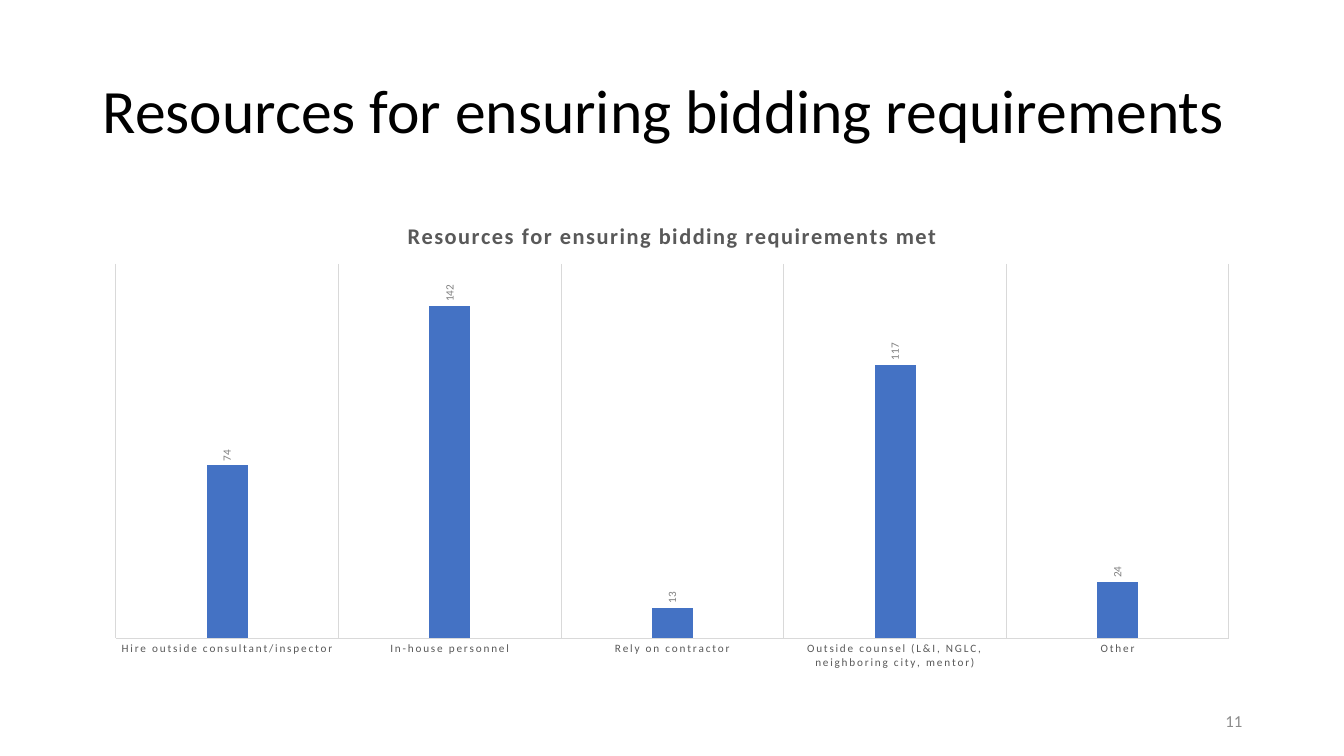
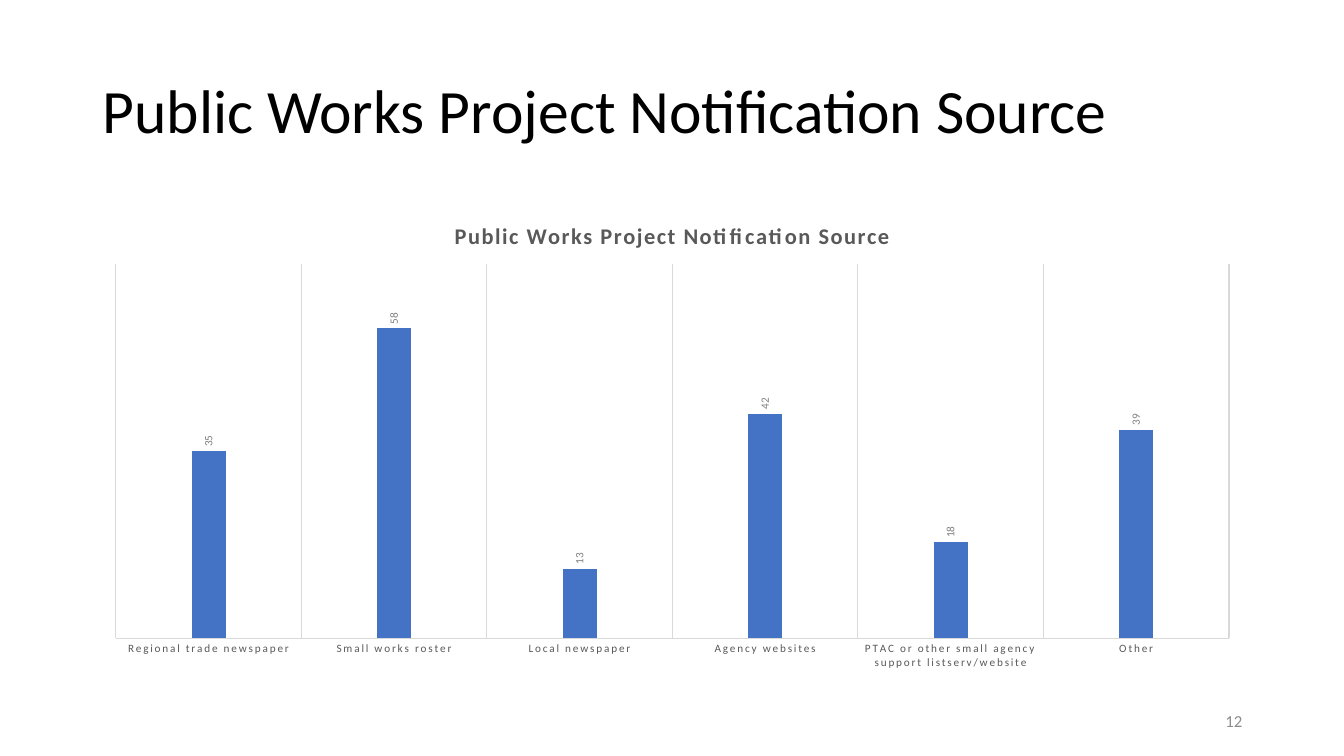
from pptx import Presentation
from pptx.chart.data import CategoryChartData
from pptx.dml.color import RGBColor
from pptx.enum.chart import XL_CHART_TYPE, XL_LABEL_POSITION, XL_TICK_MARK
from pptx.enum.text import MSO_ANCHOR, PP_ALIGN
from pptx.oxml import parse_xml
from pptx.oxml.ns import nsdecls
from pptx.util import Inches, Pt

COLUMN = XL_CHART_TYPE.COLUMN_CLUSTERED
OUTSIDE_END = XL_LABEL_POSITION.OUTSIDE_END
NO_TICK = XL_TICK_MARK.NONE
MIDDLE = MSO_ANCHOR.MIDDLE
LEFT, RIGHT = PP_ALIGN.LEFT, PP_ALIGN.RIGHT

FONT = "Calibri"
BLACK, BLUE = "000000", "4472C4"
DARK_GREY, MID_GREY, NUMBER_GREY, LINE_GREY = "595959", "808080", "8C8C8C", "D9D9D9"
MARGIN, CONTENT_W = 0.92, 11.5

# Slide title, chart title, axis maximum, slide number, values by category
SLIDES = [
    ("Resources for ensuring bidding requirements",
     "Resources for ensuring bidding requirements met", 160, 11,
     {"Hire outside consultant/inspector": 74,
      "In-house personnel": 142,
      "Rely on contractor": 13,
      "Outside counsel (L&I, NGLC, neighboring city, mentor)": 117,
      "Other": 24}),
    ("Public Works Project Notification Source",
     "Public Works Project Notification Source", 70, 12,
     {"Regional trade newspaper": 35,
      "Small works roster": 58,
      "Local newspaper": 13,
      "Agency websites": 42,
      "PTAC or other small agency support listserv/website": 18,
      "Other": 39}),
]


def rgb(color):
    return RGBColor.from_string(color)


def set_font(font, size, color, bold=False):
    font.name, font.size, font.bold = FONT, Pt(size), bold
    font.color.rgb = rgb(color)


def add_text(s, text, left, top, width, height, *, size, color,
             align=LEFT, line_spacing=1.0):
    box = s.shapes.add_textbox(Inches(left), Inches(top), Inches(width), Inches(height))
    tf = box.text_frame
    tf.word_wrap = True
    tf.vertical_anchor = MIDDLE
    p = tf.paragraphs[0]
    p.alignment, p.line_spacing = align, line_spacing
    r = p.add_run()
    r.text = text
    set_font(r.font, size, color)


def set_line(line):
    line.color.rgb = rgb(LINE_GREY)
    line.width = Pt(0.75)


def set_plot_layout(chart, x, y, w, h):
    """Fix the inner plot area, in fractions of the chart."""
    plot_area = chart.element.xpath("c:chart/c:plotArea")[0]
    for old in plot_area.xpath("c:layout"):
        plot_area.remove(old)
    sizes = "".join(f'<c:{tag} val="{val}"/>'
                    for tag, val in zip("xywh", (x, y, w, h)))
    plot_area.insert(0, parse_xml(
        f'<c:layout {nsdecls("c")}><c:manualLayout><c:layoutTarget val="inner"/>'
        f'<c:xMode val="edge"/><c:yMode val="edge"/>{sizes}'
        '</c:manualLayout></c:layout>'))


def add_column_chart(s, title, values, maximum):
    data = CategoryChartData()
    data.categories = list(values)
    data.add_series("Series 1", list(values.values()))
    chart = s.shapes.add_chart(COLUMN, Inches(MARGIN), Inches(2), Inches(CONTENT_W),
                               Inches(4.76), data).chart
    set_font(chart.font, 10, BLACK)
    chart.has_legend = False

    # Title
    chart.has_title = True
    chart.chart_title.include_in_layout = False
    r = chart.chart_title.text_frame.paragraphs[0].add_run()
    r.text = title
    set_font(r.font, 16, DARK_GREY, bold=True)

    # Columns and their labels
    plot = chart.plots[0]
    plot.gap_width, plot.overlap = 444, -90
    plot.vary_by_categories = False
    fill = plot.series[0].format.fill
    fill.solid()
    fill.fore_color.rgb = rgb(BLUE)
    plot.has_data_labels = True
    labels = plot.data_labels
    labels.show_value = True
    labels.position = OUTSIDE_END
    set_font(labels.font, 8, MID_GREY)

    # Axes
    cat, val = chart.category_axis, chart.value_axis
    cat.major_tick_mark = cat.minor_tick_mark = NO_TICK
    set_font(cat.tick_labels.font, 8, DARK_GREY)
    set_line(cat.format.line)
    cat.has_major_gridlines = True
    set_line(cat.major_gridlines.format.line)
    val.has_major_gridlines = False
    val.minimum_scale, val.maximum_scale = 0, maximum
    val.visible = False

    # Letter spacing, upright labels and plot position
    root = chart.element
    for query, name, value in (
            ("//c:title//a:rPr", "spc", "120"),
            ("//c:catAx/c:txPr//a:defRPr", "spc", "120"),
            ("//c:dLbls/c:txPr/a:bodyPr", "rot", "-5400000")):
        root.xpath(query)[0].set(name, value)
    set_plot_layout(chart, 0.02, 0.13, 0.96, 0.78)


def add_slide(prs, title, chart_title, maximum, number, values):
    s = prs.slides.add_slide(prs.slide_layouts[6])
    add_text(s, title, MARGIN, 0.4, CONTENT_W, 1.45, size=44, color=BLACK,
             line_spacing=0.9)
    add_column_chart(s, chart_title, values, maximum)
    add_text(s, str(number), 9.42, 6.95, 3, 0.4, size=12, color=NUMBER_GREY,
             align=RIGHT)


def main():
    prs = Presentation()
    prs.slide_width, prs.slide_height = Inches(13.33), Inches(7.5)
    for content in SLIDES:
        add_slide(prs, *content)
    prs.save("out.pptx")


if __name__ == "__main__":
    main()
